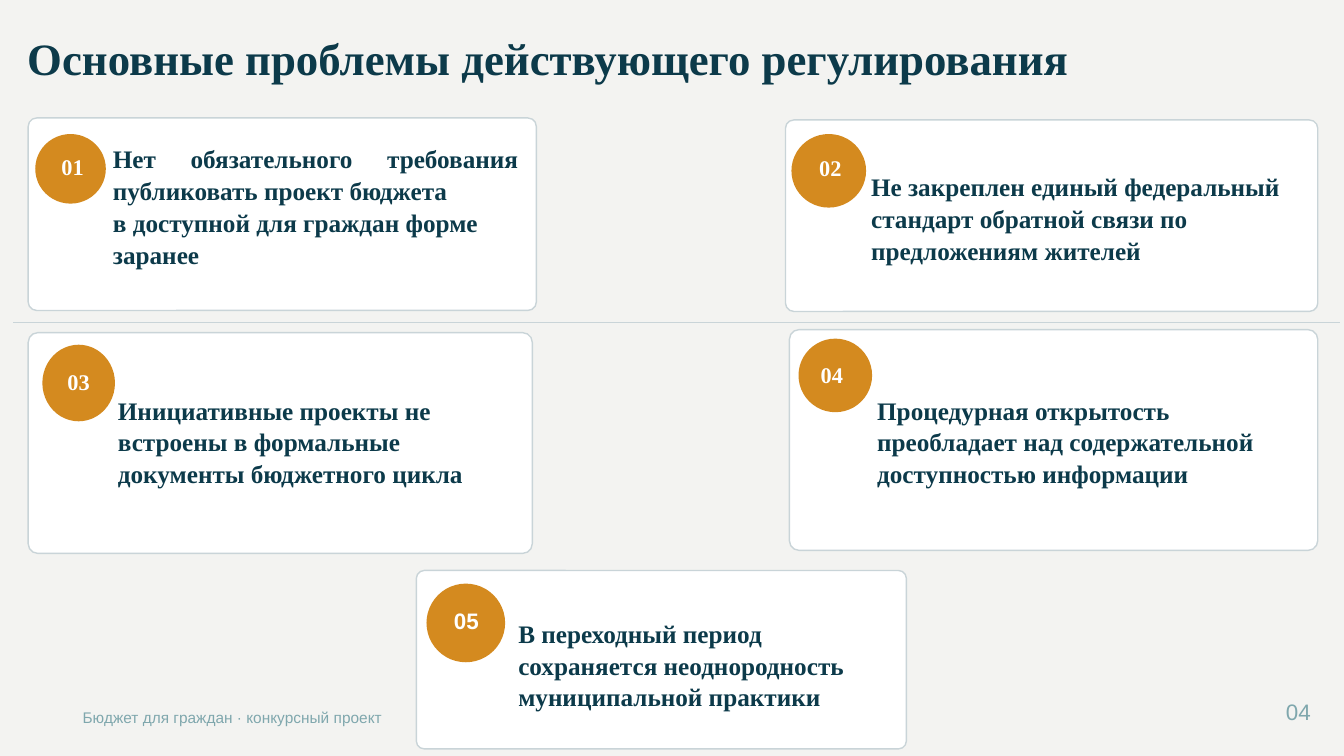
from lxml import etree
from pptx import Presentation
from pptx.dml.color import RGBColor
from pptx.enum.shapes import MSO_CONNECTOR, MSO_SHAPE
from pptx.enum.text import MSO_ANCHOR, MSO_AUTO_SIZE, PP_ALIGN
from pptx.oxml.ns import qn
from pptx.util import Emu, Pt

LEFT, CENTER, RIGHT, JUSTIFY = PP_ALIGN.LEFT, PP_ALIGN.CENTER, PP_ALIGN.RIGHT, PP_ALIGN.JUSTIFY
MIDDLE = MSO_ANCHOR.MIDDLE
NO_FIT = MSO_AUTO_SIZE.NONE
ROUNDED, OVAL = MSO_SHAPE.ROUNDED_RECTANGLE, MSO_SHAPE.OVAL
STRAIGHT = MSO_CONNECTOR.STRAIGHT
SERIF, SANS = "Times New Roman", "Arial"
INK, MUTED, ACCENT, BORDER, WHITE, PAPER = "0C3A4A", "7FA7AD", "D48A1F", "C9D4D8", "FFFFFF", "F3F3F1"
PX = 9144


def px(*values):
    """Turn px lengths, 100 to the inch, into EMU."""
    return [Emu(v * PX) for v in values]


def rgb(value):
    """Turn a hex string into a colour."""
    return RGBColor.from_string(value)


class Deck:
    """Holds the style and the current slide."""

    def __init__(self, prs):
        """Add a title-only slide with the paper background."""
        self.s = prs.slides.add_slide(prs.slide_layouts[5])
        self.s.background.fill.solid()
        self.s.background.fill.fore_color.rgb = rgb(PAPER)

    def set_text(self, sp, paragraphs, size, color, font=SERIF, bold=True, spacing=1.0):
        """Fill a text shape with (text, alignment) paragraphs."""
        tf = sp.text_frame
        tf.word_wrap = True
        tf.auto_size = NO_FIT
        tf.vertical_anchor = MIDDLE
        tf.margin_left = tf.margin_top = tf.margin_right = tf.margin_bottom = 0
        for i, (text, align) in enumerate(paragraphs):
            p = tf.add_paragraph() if i else tf.paragraphs[0]
            p.text = text
            p.alignment = align
            p.line_spacing = spacing
            p.font.size = Pt(size)
            p.font.name = font
            p.font.bold = bold
            p.font.color.rgb = rgb(color)

    def title(self, box, text):
        """Move and format the title placeholder."""
        sp = self.s.shapes.title
        sp.left, sp.top, sp.width, sp.height = px(*box)
        self.set_text(sp, [(text, LEFT)], 32, INK)

    def text(self, box, paragraphs, size, color, **style):
        """Add a text box."""
        self.set_text(self.s.shapes.add_textbox(*px(*box)), paragraphs, size, color, **style)

    def shape(self, kind, box, fill, line=None):
        """Add a filled preset shape, outlined if a line colour is given."""
        sp = self.s.shapes.add_shape(kind, *px(*box))
        sp.shadow.inherit = False
        sp.fill.solid()
        sp.fill.fore_color.rgb = rgb(fill)
        if line:
            sp.line.color.rgb = rgb(line)
            sp.line.width = Pt(1)
        else:
            sp.line.fill.background()
        return sp

    def rule(self, x1, x2, y):
        """Add a horizontal dividing line."""
        c = self.s.shapes.add_connector(STRAIGHT, *px(x1, y, x2, y))
        c.line.color.rgb = rgb(BORDER)
        c.line.width = Pt(1)
        etree.SubElement(c._element.spPr, qn("a:effectLst"))

    def card(self, number, card, badge, label, body, paragraphs, font=SERIF):
        """Add a problem card with its numbered badge."""
        self.shape(ROUNDED, card, WHITE, BORDER).adjustments[0] = 0.044
        self.shape(OVAL, badge, ACCENT)
        self.text(label, [(f"{number:02d}", CENTER)], 16, WHITE, font=font)
        self.text(body, paragraphs, 18, INK, spacing=1.05)


CARDS = [
    ((28, 117, 504, 191), (35, 133, 70, 69), (39, 154, 66, 22), (112, 128, 402, 152),
     [("Нет обязательного требования публиковать проект бюджета", JUSTIFY),
      ("в доступной для граждан форме заранее", LEFT)], SERIF),
    ((779, 119, 528, 190), (785, 133, 74, 73), (775, 155, 97, 23), (864, 141, 443, 150),
     [("Не закреплен единый федеральный стандарт обратной связи по предложениям жителей", LEFT)], SERIF),
    ((28, 330, 500, 219), (42, 342, 72, 76), (24, 367, 108, 24), (117, 360, 384, 155),
     [("Инициативные проекты не встроены в формальные документы бюджетного цикла", LEFT)], SERIF),
    ((783, 327, 524, 219), (792, 336, 73, 73), (783, 360, 84, 23), (870, 360, 421, 155),
     [("Процедурная открытость преобладает над содержательной доступностью информации", LEFT)], SERIF),
    ((413, 566, 486, 177), (423, 579, 78, 78), (411, 603, 103, 25), (514, 594, 358, 130),
     [("В переходный период сохраняется неоднородность муниципальной практики", LEFT)], SANS),
]


def main():
    """Build and save the slide."""
    prs = Presentation()
    prs.slide_width, prs.slide_height = px(1333, 750)
    deck = Deck(prs)
    deck.title((27, 16, 1143, 82), "Основные проблемы действующего регулирования")
    deck.text((82, 700, 360, 24), [("Бюджет для граждан · конкурсный проект", LEFT)],
              11, MUTED, font=SANS, bold=False)
    deck.text((1255, 692, 45, 28), [("04", RIGHT)], 16, MUTED, font=SANS, bold=False)
    deck.rule(13, 1329, 320)
    for number, (card, badge, label, body, paragraphs, font) in enumerate(CARDS, 1):
        deck.card(number, card, badge, label, body, paragraphs, font)
    prs.save("out.pptx")


if __name__ == "__main__":
    main()
